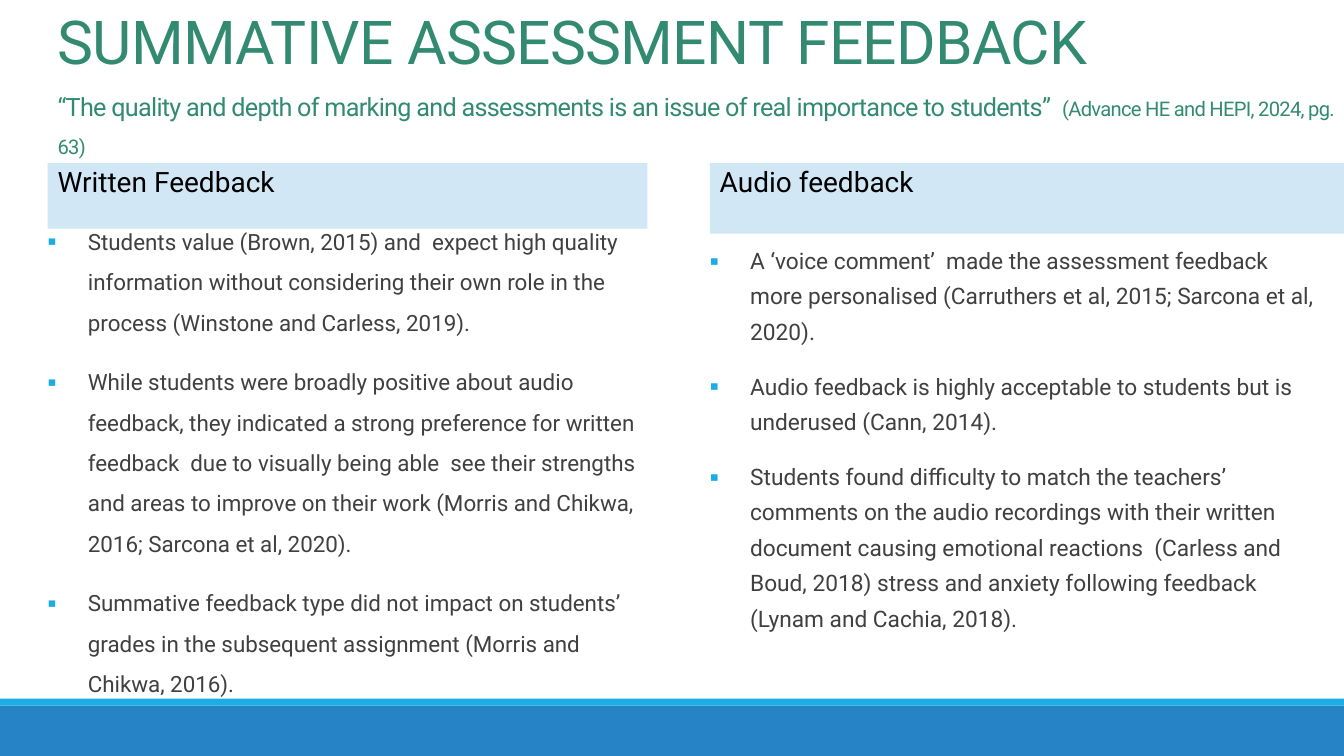
"""Build a slide comparing written and audio assessment feedback."""
from lxml import etree
from pptx import Presentation
from pptx.dml.color import RGBColor
from pptx.enum.shapes import MSO_SHAPE
from pptx.enum.text import MSO_ANCHOR
from pptx.oxml.ns import qn
from pptx.util import Pt

RECT = MSO_SHAPE.RECTANGLE
TOP, BOTTOM = MSO_ANCHOR.TOP, MSO_ANCHOR.BOTTOM
FACE = "Roboto"
GREEN, BLACK, GREY = "328B71", "000000", "404040"
PALE, BLUE, CYAN = "D1E7F6", "2683C6", "1CADE4"
WIDE, HIGH = 960, 540
LEFT, HEAD = 34, 116.6
INDENT = 28.8

TITLE = [
    ("SUMMATIVE ASSESSMENT FEEDBACK", 43.2),
    ("“The quality and depth of marking and assessments is an issue of real importance to students”  ", 18),
    ("(Advance HE and HEPI, 2024, pg. 63)", 14.4),
]
COLUMNS = [
    {
        "head": "Written Feedback", "bar": (LEFT, HEAD, 428.4, 46.8),
        "body": (LEFT, 149.8, 428.4, 321), "size": 16, "lead": 1.5,
        "points": [
            "Students value (Brown, 2015) and  expect high quality information without considering their own role in the process (Winstone and Carless, 2019).",
            "While students were broadly positive about audio feedback, they indicated a strong preference for written feedback  due to visually being able  see their strengths and areas to improve on their work (Morris and Chikwa, 2016; Sarcona et al, 2020).",
            "Summative feedback type did not impact on students’ grades in the subsequent assignment (Morris and Chikwa, 2016).",
        ],
    },
    {
        "head": "Audio feedback", "bar": (507, HEAD, 453, 50.4),
        "body": (507, 167, 437.8, 287.3), "size": 16.2, "lead": 1.3,
        "points": [
            "A ‘voice comment’  made the assessment feedback more personalised (Carruthers et al, 2015; Sarcona et al, 2020).",
            "Audio feedback is highly acceptable to students but is underused (Cann, 2014).",
            "Students found difficulty to match the teachers’ comments on the audio recordings with their written document causing emotional reactions  (Carless and Boud, 2018) stress and anxiety following feedback (Lynam and Cachia, 2018).",
        ],
    },
]
BANDS = [(504, 36, BLUE), (499, 5, CYAN)]


def paint(part, color):
    """Give a fill or a font one solid colour."""
    if hasattr(part, "solid"):
        part.solid()
        part.fore_color.rgb = RGBColor.from_string(color)
    else:
        part.color.rgb = RGBColor.from_string(color)


def style(run, size, color):
    """Set the face, size and colour of a run."""
    run.font.name = FACE
    run.font.size = Pt(size)
    paint(run.font, color)


def add_box(slide, place, inset, anchor=TOP):
    """Add a wrapping text box with the given side inset."""
    box = slide.shapes.add_textbox(*map(Pt, place))
    frame = box.text_frame
    frame.word_wrap = True
    frame.vertical_anchor = anchor
    frame.margin_left, frame.margin_right = Pt(inset), Pt(0)
    return box


def add_mark(para):
    """Give a paragraph a hanging square bullet."""
    props = para._p.get_or_add_pPr()
    props.set("marL", str(Pt(INDENT)))
    props.set("indent", str(-Pt(INDENT)))
    tint = etree.SubElement(props, qn("a:buClr"))
    etree.SubElement(tint, qn("a:srgbClr"), val=CYAN)
    etree.SubElement(props, qn("a:buFont"), typeface=FACE)
    etree.SubElement(props, qn("a:buChar"), char="▪")


def add_title(slide):
    """Add the heading and its quotation."""
    box = add_box(slide, (LEFT, 11.5, WIDE - LEFT, 105.1), 7.2, BOTTOM)
    para = box.text_frame.paragraphs[0]
    para.line_spacing = 1.5
    for i, (text, size) in enumerate(TITLE):
        if i == 1:
            para.add_line_break()
        run = para.add_run()
        run.text = text
        style(run, size, GREEN)
        run.font._element.set("spc", "-50")


def add_column(slide, col):
    """Add one column: its bullet points and its header bar."""
    frame = add_box(slide, col["body"], 0).text_frame
    for i, text in enumerate(col["points"]):
        para = frame.add_paragraph() if i else frame.paragraphs[0]
        para.text = text
        add_mark(para)
        para.line_spacing = col["lead"]
        para.space_before = Pt(12 if i else 0)
        para.space_after = Pt(2)
        style(para.runs[0], col["size"], GREY)
    bar = add_box(slide, col["bar"], 7.2)
    paint(bar.fill, PALE)
    para = bar.text_frame.paragraphs[0]
    para.text = col["head"]
    para.line_spacing = 0.9
    style(para.runs[0], 20, BLACK)


def main():
    """Build and save the slide."""
    deck = Presentation()
    deck.slide_width, deck.slide_height = Pt(WIDE), Pt(HIGH)
    slide = deck.slides.add_slide(deck.slide_layouts[6])
    for top, high, color in BANDS:
        band = slide.shapes.add_shape(RECT, 0, Pt(top), Pt(WIDE), Pt(high))
        band.shadow.inherit = False
        band.line.fill.background()
        paint(band.fill, color)
    add_title(slide)
    for col in COLUMNS:
        add_column(slide, col)
    deck.save("out.pptx")


if __name__ == "__main__":
    main()
